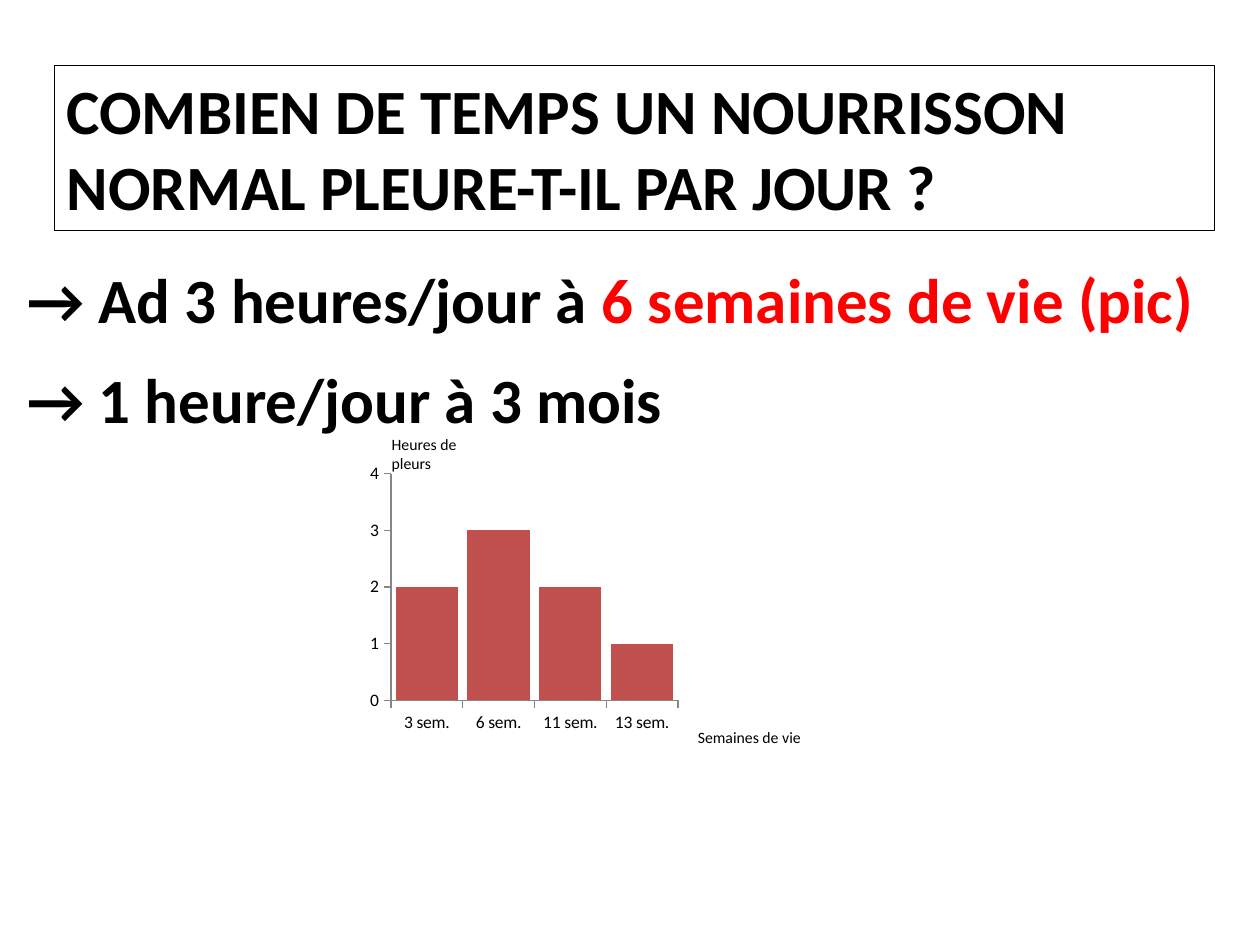
from lxml.etree import SubElement
from pptx import Presentation
from pptx.chart.data import CategoryChartData
from pptx.dml.color import RGBColor
from pptx.enum.chart import XL_CHART_TYPE, XL_TICK_MARK
from pptx.enum.shapes import MSO_SHAPE
from pptx.enum.text import MSO_ANCHOR, PP_ALIGN
from pptx.oxml.ns import qn
from pptx.util import Inches, Pt

BLACK = RGBColor(0x00, 0x00, 0x00)
RED = RGBColor(0xFF, 0x00, 0x00)
BRICK = RGBColor(0xC0, 0x50, 0x4D)
AXIS_GREY = RGBColor(0x86, 0x86, 0x86)
FONT = "Calibri"


def write_runs(shape, runs, size, bold=False, wrap=True):
    frame = shape.text_frame
    frame.word_wrap = wrap
    frame.vertical_anchor = MSO_ANCHOR.TOP
    paragraph = frame.paragraphs[0]
    paragraph.alignment = PP_ALIGN.LEFT
    for text, color in runs:
        run = paragraph.add_run()
        run.text = text
        run.font.name = FONT
        run.font.size = Pt(size)
        run.font.bold = bold
        run.font.color.rgb = color
    return paragraph


def add_title(slide, left, top, width, height):
    shape = slide.shapes.add_shape(
        MSO_SHAPE.RECTANGLE, Inches(left), Inches(top), Inches(width), Inches(height)
    )
    shape.shadow.inherit = False
    shape.fill.background()
    shape.line.color.rgb = BLACK
    shape.line.width = Pt(0.75)
    title = "COMBIEN DE TEMPS UN NOURRISSON NORMAL PLEURE-T-IL PAR JOUR ?"
    write_runs(shape, [(title, BLACK)], 36, bold=True)


def add_text(slide, left, top, width, height, runs, size, bold=False, wrap=True):
    box = slide.shapes.add_textbox(
        Inches(left), Inches(top), Inches(width), Inches(height)
    )
    return write_runs(box, runs, size, bold, wrap)


def add_answers(slide, left, top):
    peak = [("→ Ad 3 heures/jour à ", BLACK), ("6 semaines de vie (pic)", RED)]
    paragraph = add_text(slide, left, top, 9.88, 0.71, peak, 36, bold=True)
    properties = paragraph._p.get_or_add_pPr()
    properties.set("marL", str(Inches(0.59)))
    properties.set("indent", str(Inches(-0.59)))
    later = [("→ 1 heure/jour à 3 mois", BLACK)]
    add_text(slide, left, top + 0.79, 8.57, 0.71, later, 36, bold=True)


def set_plot_layout(chart, x, y, width, height):
    plot_area = chart._chartSpace.chart.plotArea
    layout = plot_area.find(qn("c:layout"))
    if layout is None:
        layout = SubElement(plot_area, qn("c:layout"))
        plot_area.insert(0, layout)
    manual = SubElement(layout, qn("c:manualLayout"))
    settings = [
        ("layoutTarget", "inner"), ("xMode", "edge"), ("yMode", "edge"),
        ("x", x), ("y", y), ("w", width), ("h", height),
    ]
    for name, value in settings:
        SubElement(manual, qn(f"c:{name}")).set("val", str(value))


def add_crying_chart(slide, left, top, width, height):
    data = CategoryChartData()
    data.categories = ["3 sem.", "6 sem.", "11 sem.", "13 sem."]
    data.add_series("Heures de pleurs", (2, 3, 2, 1))
    chart = slide.shapes.add_chart(
        XL_CHART_TYPE.COLUMN_CLUSTERED,
        Inches(left), Inches(top), Inches(width), Inches(height), data,
    ).chart
    chart.has_title = False
    chart.has_legend = False
    chart.font.name = FONT
    chart.font.size = Pt(10)
    chart.font.color.rgb = BLACK

    plot = chart.plots[0]
    plot.gap_width = 15
    plot.vary_by_categories = False
    fill = plot.series[0].format.fill
    fill.solid()
    fill.fore_color.rgb = BRICK

    for axis in (chart.category_axis, chart.value_axis):
        axis.has_major_gridlines = False
        axis.major_tick_mark = XL_TICK_MARK.OUTSIDE
        axis.minor_tick_mark = XL_TICK_MARK.NONE
        axis.format.line.color.rgb = AXIS_GREY
        axis.format.line.width = Pt(0.75)
    chart.value_axis.minimum_scale = 0
    chart.value_axis.maximum_scale = 4
    chart.value_axis.major_unit = 1
    set_plot_layout(chart, 0.08, 0.05, 0.78, 0.83)


def add_chart_region(slide, left, top):
    add_text(slide, left + 0.14, top - 0.25, 0.78, 0.48,
             [("Heures de pleurs", BLACK)], 9)
    add_text(slide, left + 2.57, top + 2.08, 1.14, 0.3,
             [("Semaines de vie", BLACK)], 9, wrap=False)
    add_crying_chart(slide, left, top, 2.92, 2.17)


def main():
    presentation = Presentation()
    presentation.slide_width = Inches(10)
    presentation.slide_height = Inches(7.5)
    slide = presentation.slides.add_slide(presentation.slide_layouts[6])
    add_title(slide, 0.43, 0.52, 9.21, 1.31)
    add_answers(slide, 0.12, 2.02)
    add_chart_region(slide, 2.87, 3.65)
    presentation.save("out.pptx")


if __name__ == "__main__":
    main()
